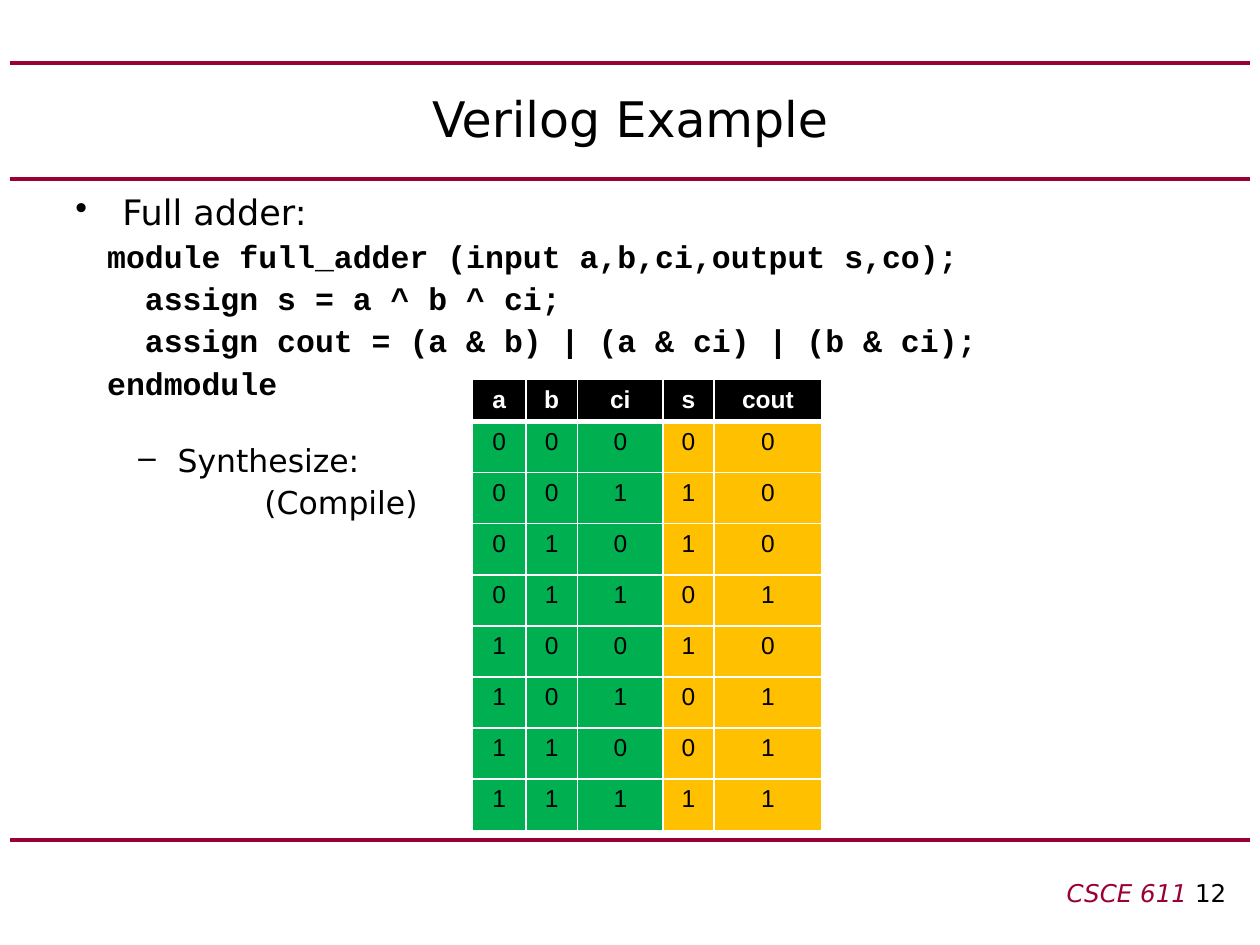
from lxml import etree
from pptx import Presentation
from pptx.dml.color import RGBColor
from pptx.enum.shapes import MSO_CONNECTOR
from pptx.enum.text import MSO_ANCHOR, PP_ALIGN
from pptx.oxml.ns import qn
from pptx.util import Cm, Pt

LEFT, CENTER, RIGHT = PP_ALIGN.LEFT, PP_ALIGN.CENTER, PP_ALIGN.RIGHT
MIDDLE = MSO_ANCHOR.MIDDLE
STRAIGHT = MSO_CONNECTOR.STRAIGHT
COLORS = {"rule": "990033", "black": "000000", "white": "FFFFFF",
          "input": "00B050", "output": "FFC000"}
SANS, MONO, ARIAL = "DejaVu Sans", "Courier New", "Arial"


def write(frame, text, size=18, face=SANS, color="black", bold=False, slant=False,
          align=LEFT, left=0, hang=0, before=0, lines=None, bullet=None, join=False):
    para = frame.paragraphs[-1]
    if para.runs and not join:
        para = frame.add_paragraph()
    if not join:
        para.alignment = align
        para.space_before = Pt(before)
        para.line_spacing = lines
        props = para._p.get_or_add_pPr()
        props.set("marL", str(Cm(left)))
        props.set("indent", str(Cm(-hang)))
        if bullet:
            etree.SubElement(props, qn("a:buChar"), char=bullet)
        else:
            etree.SubElement(props, qn("a:buNone"))
    run = para.add_run()
    run.text = text
    font = run.font
    font.size, font.name, font.bold, font.italic = Pt(size), face, bold, slant
    font.color.rgb = RGBColor.from_string(COLORS[color])


def border(cell, side, width):
    line = etree.SubElement(cell._tc.get_or_add_tcPr(), qn("a:" + side), w=str(Pt(width)))
    fill = etree.SubElement(line, qn("a:solidFill"))
    etree.SubElement(fill, qn("a:srgbClr"), val=COLORS["white"])


deck = Presentation()
deck.slide_width, deck.slide_height = Cm(25.4), Cm(19.05)
slide = deck.slides.add_slide(deck.slide_layouts[6])
shapes = slide.shapes

for y in (1.27, 3.61, 16.94):
    rule = shapes.add_connector(STRAIGHT, Cm(0.2), Cm(y), Cm(25.2), Cm(y))
    rule.line.color.rgb = RGBColor.from_string(COLORS["rule"])
    rule.line.width = Pt(2.25)
    etree.SubElement(rule._element.spPr, qn("a:effectLst"))

frames = []
for box in ((1.27, 1.27, 22.86, 2.21), (1.27, 3.81, 22.23, 12.9), (9.53, 17.58, 15.44, 0.84)):
    frame = shapes.add_textbox(*map(Cm, box)).text_frame
    frame.word_wrap = True
    frames.append(frame)
title, body, foot = frames

title.vertical_anchor = MIDDLE
write(title, "Verilog Example", size=28, align=CENTER)

write(body, "Full adder:", size=20, left=0.95, hang=0.95, lines=0.9, bullet="•")
code = """module full_adder (input a,b,ci,output s,co);
  assign s = a ^ b ^ ci;
  assign cout = (a & b) | (a & ci) | (b & ci);
endmodule"""
for text in code.splitlines():
    write(body, text, face=MONO, bold=True, left=0.64, before=4.7, lines=0.9)
write(body, "Synthesize:", left=2.06, hang=0.79, before=25, lines=0.9, bullet="–")
write(body, "(Compile)", left=3.81, before=4, lines=0.9)

write(foot, "CSCE 611 ", size=14, color="rule", slant=True, align=RIGHT)
write(foot, "12", size=14, join=True)

heads = ["a", "b", "ci", "s", "cout"]
rows = [heads]
for n in range(8):
    a, b, ci = n >> 2, n >> 1 & 1, n & 1
    total = a + b + ci
    rows.append([a, b, ci, total % 2, total // 2])

widths = [1.07, 1.04, 1.73, 1.02, 2.18]
heights = [0.84] + [1.03] * 8
grid = shapes.add_table(len(rows), len(heads), Cm(9.53), Cm(7.65),
                        Cm(sum(widths)), Cm(sum(heights))).table
for col, width in zip(grid.columns, widths):
    col.width = Cm(width)
for r, row in enumerate(rows):
    grid.rows[r].height = Cm(heights[r])
    for c, value in enumerate(row):
        cell = grid.cell(r, c)
        top = r == 0
        for side in ("lnL", "lnR", "lnT", "lnB"):
            thick = top and side == "lnB" or r == 1 and side == "lnT"
            border(cell, side, 3 if thick else 1)
        shade = "black" if top else "input" if c < 3 else "output"
        cell.fill.solid()
        cell.fill.fore_color.rgb = RGBColor.from_string(COLORS[shade])
        write(cell.text_frame, str(value), size=14, face=ARIAL, bold=top,
              color="white" if top else "black", align=CENTER)

deck.save("out.pptx")
